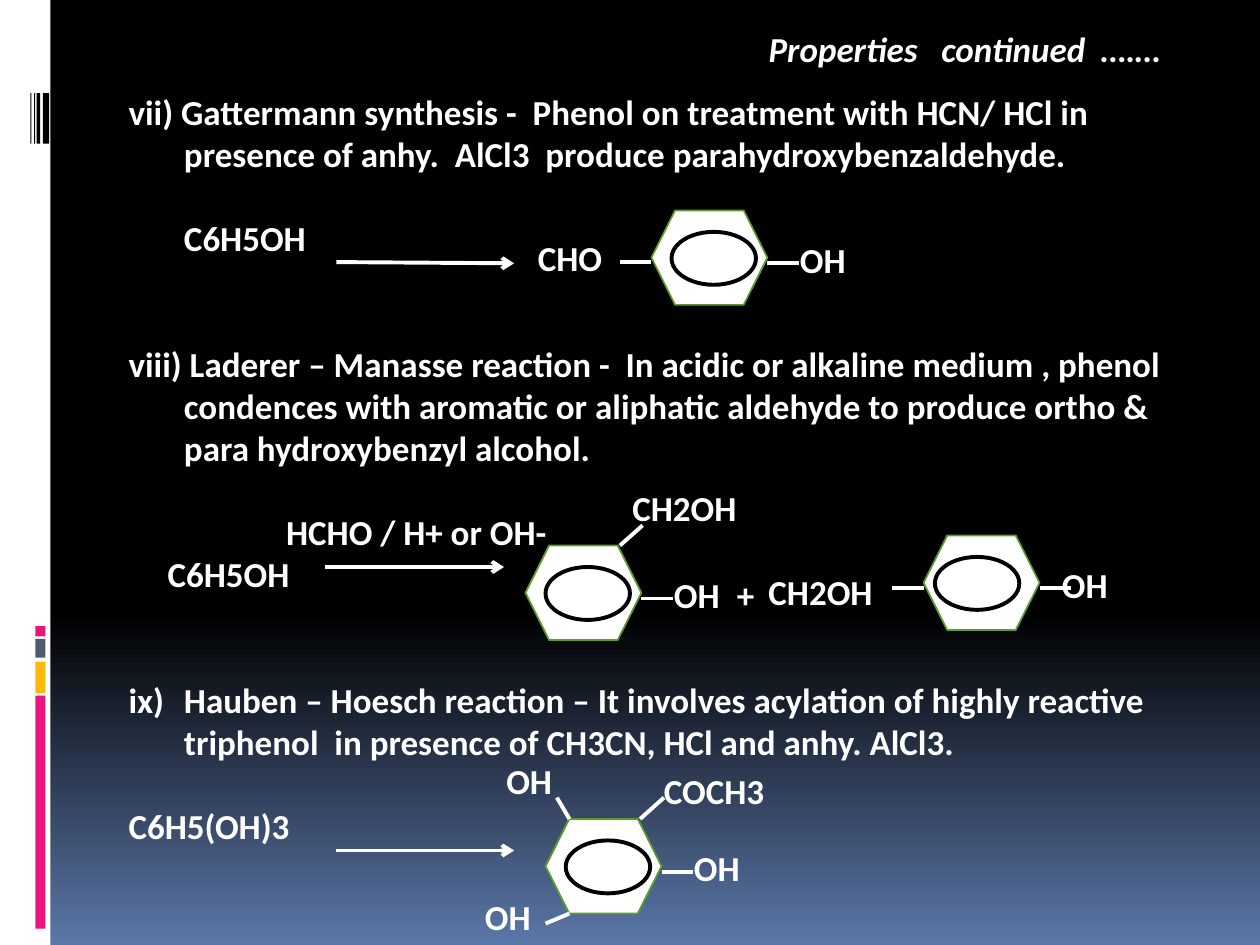
import pptx
import pptx.dml.color
import pptx.enum.dml
import pptx.enum.shapes
import pptx.enum.text
import pptx.oxml.ns
import pptx.util
from lxml import etree
from pptx.util import Inches

COLORS = {"white": "FFFFFF", "black": "000000", "pink": "EA157A", "amber": "FEB80A",
          "slate": "4E5B6F", "blue": "5B77A8", "green": "5E9B2C"}
SHAPES = pptx.enum.shapes.MSO_SHAPE


def rgb(name):
    """Return the named colour."""
    return pptx.dml.color.RGBColor.from_string(COLORS[name])


def add_child(parent, tag, **attributes):
    """Append a DrawingML element and return it."""
    return etree.SubElement(parent, pptx.oxml.ns.qn(tag), attributes)


def write(paragraph, text, italic=False):
    """Add one run in the slide's bold white type."""
    run = paragraph.add_run()
    run.text = text
    run.font.name = "Calibri"
    run.font.size = pptx.util.Pt(20)
    run.font.bold = True
    run.font.italic = italic
    run.font.color.rgb = rgb("white")


def place(shape, left, top, width, height):
    """Move a placeholder and let its text start at the top left."""
    shape.left, shape.top = Inches(left), Inches(top)
    shape.width, shape.height = Inches(width), Inches(height)
    frame = shape.text_frame
    frame.word_wrap = True
    frame.auto_size = pptx.enum.text.MSO_AUTO_SIZE.NONE
    frame.vertical_anchor = pptx.enum.text.MSO_ANCHOR.TOP
    return frame


def add_label(slide, text, left, top, width=0.67):
    """Write a formula or sign."""
    label = slide.shapes.add_textbox(Inches(left), Inches(top), Inches(width), Inches(0.44))
    label.text_frame.word_wrap = True
    write(label.text_frame.paragraphs[0], text)


def add_line(slide, x1, y1, x2, y2, arrow=False):
    """Draw a bond, or a reaction arrow."""
    line = slide.shapes.add_connector(pptx.enum.shapes.MSO_CONNECTOR.STRAIGHT,
                                      Inches(x1), Inches(y1), Inches(x2), Inches(y2))
    line.line.color.rgb = rgb("white")
    line.line.width = pptx.util.Pt(2.25)
    if arrow:
        add_child(line.line._get_or_add_ln(), "a:tailEnd", type="arrow")
    add_child(line._element.spPr, "a:effectLst")


def add_block(slide, kind, left, top, width, height, fill=None, outline=None, weight=1):
    """Draw a preset shape with an optional fill and outline."""
    block = slide.shapes.add_shape(kind, Inches(left), Inches(top), Inches(width), Inches(height))
    block.shadow.inherit = False
    if fill:
        block.fill.solid()
        block.fill.fore_color.rgb = rgb(fill)
    else:
        block.fill.background()
    if outline:
        block.line.color.rgb = rgb(outline)
        block.line.width = pptx.util.Pt(weight)
    else:
        block.line.fill.background()


def add_phenol(slide, left, top, bonds=(), core=0.16, hydroxyl=1.08):
    """Draw a benzene ring with OH on its right and further bonds, relative to its corner."""
    add_block(slide, SHAPES.HEXAGON, left, top, 0.92, 0.75, "white", "green")
    add_block(slide, SHAPES.OVAL, left + core, top + 0.17, 0.67, 0.42, None, "black", 2.25)
    for x1, y1, x2, y2 in ((0.92, 0.42, 1.17, 0.42), *bonds):
        add_line(slide, left + x1, top + y1, left + x2, top + y2)
    add_label(slide, "OH", left + hydroxyl, top + 0.17)


def add_gattermann(slide, left, top):
    """Draw the Gattermann synthesis."""
    add_line(slide, left, top + 0.41, left + 1.41, top + 0.42, arrow=True)
    add_label(slide, "CHO", left + 1.5, top + 0.16, 1.08)
    add_phenol(slide, left + 2.5, top, [(-0.25, 0.41, 0, 0.41)])


def add_manasse(slide, left, top):
    """Draw the ortho and para products of the Manasse reaction."""
    add_line(slide, left, top + 0.25, left + 1.42, top + 0.25, arrow=True)
    add_label(slide, "CH2OH", left + 2.34, top - 0.44, 1.42)
    add_phenol(slide, left + 1.59, top + 0.08, [(0.75, 0, 0.93, -0.16)])
    add_label(slide, "+", left + 3.17, top + 0.25, 0.33)
    add_label(slide, "CH2OH", left + 3.42, top + 0.23, 1.42)
    add_phenol(slide, left + 4.75, top, [(-0.25, 0.42, 0, 0.42)], core=0.09, hydroxyl=1)


def add_hoesch(slide, left, top):
    """Draw the acylation of the triphenol."""
    add_line(slide, left, top + 0.25, left + 1.41, top + 0.25, arrow=True)
    add_phenol(slide, left + 1.66, top, [(0.19, 0, 0.09, -0.17), (0.19, 0.75, 0, 0.83),
                                         (0.75, 0, 0.94, -0.17)])
    add_label(slide, "OH", left + 1.25, top - 0.52)
    add_label(slide, "OH", left + 1.08, top + 0.56)
    add_label(slide, "COCH3", left + 2.5, top - 0.44, 1.42)


def add_rail(slide, left, top, width, height):
    """Draw the white side rail with its coloured and black bars."""
    add_block(slide, SHAPES.RECTANGLE, left, top, width, height, "white")
    for y, length, color in ((5.52, 1.85, "pink"), (5.25, 0.25, "amber"),
                             (5.07, 0.15, "slate"), (4.97, 0.08, "pink")):
        add_block(slide, SHAPES.RECTANGLE, left + 0.28, top + y, 0.08, length, color)
    for x, thickness in ((0.34, 0.05), (0.29, 0.03), (0.27, 0.01), (0.24, 0.01)):
        add_block(slide, SHAPES.RECTANGLE, left + x, top + 0.74, thickness, 0.4, "black")


def fill_title(slide, *box):
    """Write the heading."""
    heading = place(slide.shapes.title, *box).paragraphs[0]
    heading.alignment = pptx.enum.text.PP_ALIGN.LEFT
    write(heading, "Properties   continued  ….…", italic=True)


def fill_body(slide, *box):
    """Write the reactions and reactants, with margin, first indent and lines of space above."""
    frame = place(slide.placeholders[1], *box)
    entries = (
        ("vii) Gattermann synthesis -  Phenol on treatment with HCN/ HCl in presence of anhy.  "
         "AlCl3  produce parahydroxybenzaldehyde.", 0.44, -0.44, 0),
        ("C6H5OH", 0.44, 0, 1),
        ("viii) Laderer – Manasse reaction -  In acidic or alkaline medium , phenol condences "
         "with aromatic or aliphatic aldehyde to produce ortho & para hydroxybenzyl alcohol.",
         0.44, -0.44, 2),
        ("HCHO / H+ or OH-", 1.25, 0, 1),
        ("C6H5OH", 0.31, 0, 0),
        ("Hauben – Hoesch reaction – It involves acylation of highly reactive triphenol  in "
         "presence of CH3CN, HCl and anhy. AlCl3.", 0.44, -0.44, 2),
        ("C6H5(OH)3", 0, 0, 1),
    )
    for number, (text, margin, indent, gap) in enumerate(entries):
        entry = frame.add_paragraph() if number else frame.paragraphs[0]
        entry.space_before = pptx.util.Pt(24 * gap)
        properties = entry._p.get_or_add_pPr()
        properties.set("marL", str(Inches(margin)))
        properties.set("indent", str(Inches(indent)))
        if text.startswith("Hauben"):
            add_child(properties, "a:buFont", typeface="+mj-lt")
            add_child(properties, "a:buAutoNum", type="romanLcParenR", startAt="9")
        else:
            add_child(properties, "a:buNone")
        write(entry, text)


def paint_background(slide):
    """Fade the background from black to blue at the foot."""
    fill = slide.background.fill
    fill.gradient()
    fill.gradient_angle = 270
    for stop, position, color in zip(fill.gradient_stops, (0.65, 1), ("black", "blue")):
        stop.position = position
        stop.color.rgb = rgb(color)


def main():
    """Build and save the slide."""
    deck = pptx.Presentation()
    deck.slide_width, deck.slide_height = Inches(10), Inches(7.5)
    slide = deck.slides.add_slide(deck.slide_layouts[1])
    paint_background(slide)
    add_rail(slide, 0, 0, 0.4, 7.5)
    fill_title(slide, 6, 0.17, 4.33, 0.44)
    fill_body(slide, 0.92, 0.67, 8.67, 6.16)
    add_gattermann(slide, 2.67, 1.67)
    add_manasse(slide, 2.58, 4.25)
    add_hoesch(slide, 2.67, 6.5)
    deck.save("out.pptx")


if __name__ == "__main__":
    main()
